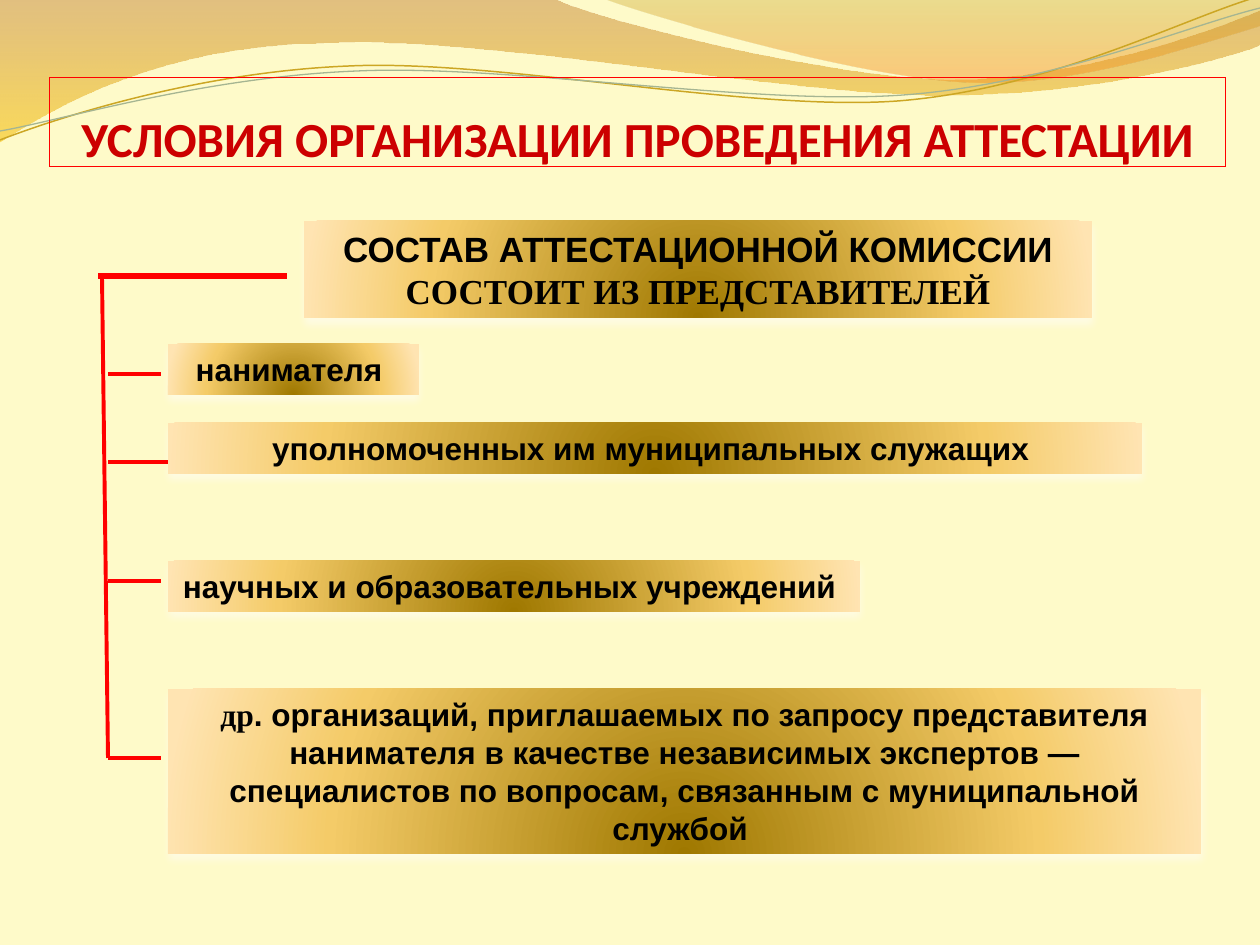
import math

from lxml import etree
from pptx import Presentation, util as u
from pptx.dml.color import RGBColor
from pptx.enum import shapes, text
from pptx.oxml import ns, parse_xml

PX = 914400 / 126
TILT = 357.3
RED = "FF0000"
GOLD = [(0, "9F7800", 100), (68, "F4CB68", 100), (100, "FFE4B2", 100)]
CENTER = '<a:path path="circle"><a:fillToRect l="50000" t="130000" r="50000" b="-30000"/></a:path>'
DOWN = '<a:lin ang="5400000" scaled="0"/>'

WIDE_WAVE = [(0, 0), (554, -1), (600, 21, 837, 79, 955, 79),
             (1075, 79, 1207, 33, 1260, 11), (1261, 45),
             (1239, 55, 1096, 96, 940, 95), (783, 95, 481, 35, 324, 43),
             (163, 45, 58, 105, -1, 142), (0, 0)]
RIGHT_WAVE = [(604, -1), (641, 14, 859, 78, 969, 82),
              (1079, 87, 1211, 40, 1260, 26), (1260, 0), (604, -1)]
GOLD_CURVE = [(0, 140), (60, 117, 199, 72, 349, 66),
              (498, 59, 747, 112, 898, 101), (1050, 89, 1182, 19, 1257, -3)]
GREEN_CURVE = [(0, 131), (59, 121, 203, 77, 357, 71),
               (508, 64, 752, 106, 903, 95), (1053, 84, 1186, 26, 1260, 8)]

MEMBERS = [
    (344, 251, 51, [("нанимателя ", "Arial")]),
    (423, 974, 51, [("уполномоченных им муниципальных служащих ", "Arial")]),
    (561, 692, 51, [("научных и образовательных учреждений ", "Arial")]),
    (689, 1033, 165, [
        ("др", "Times New Roman"),
        (". организаций, приглашаемых по запросу представителя "
         "нанимателя в качестве независимых экспертов — специалистов по "
         "вопросам, связанным с муниципальной службой ", "Arial")]),
]


def px(value):
    return u.Emu(round(value * PX))


def color(value):
    return RGBColor.from_string(value)


def drawing(tag, attributes, content):
    return parse_xml(f'<a:{tag} {ns.nsdecls("a")} {attributes}>{content}</a:{tag}>')


def fill_gradient(shape, stops, direction):
    marks = "".join(
        f'<a:gs pos="{place * 1000}"><a:srgbClr val="{tone}">'
        f'<a:alpha val="{opacity * 1000}"/></a:srgbClr></a:gs>'
        for place, tone, opacity in stops)
    shape.fill.background()
    properties = shape._element.spPr
    properties.replace(
        properties.find(ns.qn("a:noFill")),
        drawing("gradFill", 'rotWithShape="1"', f"<a:gsLst>{marks}</a:gsLst>{direction}"))


def add_shadow(shape):
    effects = shape._element.spPr.find(ns.qn("a:effectLst"))
    effects.append(drawing(
        "outerShdw", 'blurRad="57150" dist="38100" dir="5400000" algn="ctr" rotWithShape="0"',
        '<a:srgbClr val="FFFFFF"><a:alpha val="48000"/></a:srgbClr>'))


def untilt(x, y, frame, angle):
    left, top, width, height = frame
    dx, dy = x - left - width / 2, y - top - height / 2
    turn = math.radians(-angle)
    return (px(width / 2 + dx * math.cos(turn) - dy * math.sin(turn)),
            px(height / 2 + dx * math.sin(turn) + dy * math.cos(turn)))


def add_outline(parent, outline, frame, angle=0, closed=False):
    steps = [[untilt(x, y, frame, angle) for x, y in zip(step[::2], step[1::2])]
             for step in outline]
    builder = parent.shapes.build_freeform(*steps[0][0])
    builder.add_line_segments([step[-1] for step in steps[1:]], close=closed)
    shape = builder.convert_to_shape()
    shape.left, shape.top, shape.width, shape.height = map(px, frame)
    shape.rotation = angle
    shape.shadow.inherit = False
    route = shape._element.spPr.find(".//" + ns.qn("a:path"))
    route.set("w", str(shape.width))
    route.set("h", str(shape.height))
    for old in list(route):
        if old.tag != ns.qn("a:close"):
            route.remove(old)
    for index, step in enumerate(steps):
        tag = "cubicBezTo" if len(step) == 3 else "lnTo" if index else "moveTo"
        points = "".join(f'<a:pt x="{x}" y="{y}"/>' for x, y in step)
        route.insert(index, drawing(tag, "", points))
    return shape


def add_wave(page, outline, frame, stops):
    wave = add_outline(page, outline, frame, closed=True)
    fill_gradient(wave, stops, DOWN)
    wave.line.fill.background()


def add_curve(group, outline, frame, tone, width):
    curve = add_outline(group, outline, frame, TILT)
    curve.fill.background()
    curve.line.color.rgb = color(tone)
    curve.line.width = u.Pt(width)


def add_line(page, x1, y1, x2, y2, width=2.25):
    line = page.shapes.add_connector(
        shapes.MSO_CONNECTOR.STRAIGHT, px(x1), px(y1), px(x2), px(y2))
    line.line.color.rgb = color(RED)
    line.line.width = u.Pt(width)
    etree.SubElement(line._element.spPr, ns.qn("a:effectLst"))


def add_span(para, words, font, size, tone="000000"):
    span = para.add_run()
    span.text = words
    span.font.name = font
    span.font.size = u.Pt(size)
    span.font.bold = True
    span.font.color.rgb = color(tone)


def add_title(page, words):
    box = page.shapes.add_textbox(px(49), px(78), px(1177), px(89))
    box.line.color.rgb = color(RED)
    frame = box.text_frame
    frame.word_wrap = True
    frame.vertical_anchor = text.MSO_ANCHOR.BOTTOM
    frame.margin_left = frame.margin_right = frame.margin_bottom = 0
    para = frame.paragraphs[0]
    para.alignment = text.PP_ALIGN.CENTER
    add_span(para, words, "Calibri", 28, "CC0000")


def add_box(page, left, top, width, height, spans, size=18):
    box = page.shapes.add_shape(
        shapes.MSO_SHAPE.RECTANGLE, px(left), px(top), px(width), px(height))
    box.shadow.inherit = False
    fill_gradient(box, GOLD, CENTER)
    box.line.fill.background()
    add_shadow(box)
    frame = box.text_frame
    frame.word_wrap = True
    frame.auto_size = text.MSO_AUTO_SIZE.SHAPE_TO_FIT_TEXT
    frame.vertical_anchor = text.MSO_ANCHOR.TOP
    para = frame.paragraphs[0]
    para.alignment = text.PP_ALIGN.CENTER
    for words, font in spans:
        add_span(para, words, font, size)


def main():
    deck = Presentation()
    deck.slide_width, deck.slide_height = px(1260), px(945)
    page = deck.slides.add_slide(deck.slide_layouts[6])
    page.background.fill.solid()
    page.background.fill.fore_color.rgb = color("FEFAC9")

    add_wave(page, WIDE_WAVE, (-1, -1, 1262, 143),
             [(0, "C07A28", 45), (100, "F7BF00", 55)])
    add_wave(page, RIGHT_WAVE, (604, -1, 656, 88),
             [(0, "C09709", 30), (80, "F59320", 45)])
    group = page.shapes.add_group_shape()
    add_curve(group, GOLD_CURVE, (-2, 28, 1262, 89), "CCA624", 0.85)
    add_curve(group, GREEN_CURVE, (-2, 38, 1263, 73), "A5B592", 0.75)

    add_title(page, "УСЛОВИЯ ОРГАНИЗАЦИИ ПРОВЕДЕНИЯ АТТЕСТАЦИИ")
    add_box(page, 304, 221, 788, 97,
            [("СОСТАВ АТТЕСТАЦИОННОЙ КОМИССИИ ", "Arial"),
             ("СОСТОИТ ИЗ ПРЕДСТАВИТЕЛЕЙ", "Times New Roman")], size=20)
    add_line(page, 287, 276, 98, 276, width=3)
    add_line(page, 102, 276, 108, 758)
    for top, width, height, spans in MEMBERS:
        add_box(page, 168, top, width, height, spans)
    for left, right, y in [(108, 161, 374), (116, 168, 462), (108, 161, 581),
                           (108, 161, 758), (108, 161, 462)]:
        add_line(page, left, y, right, y)

    deck.save("out.pptx")


if __name__ == "__main__":
    main()
